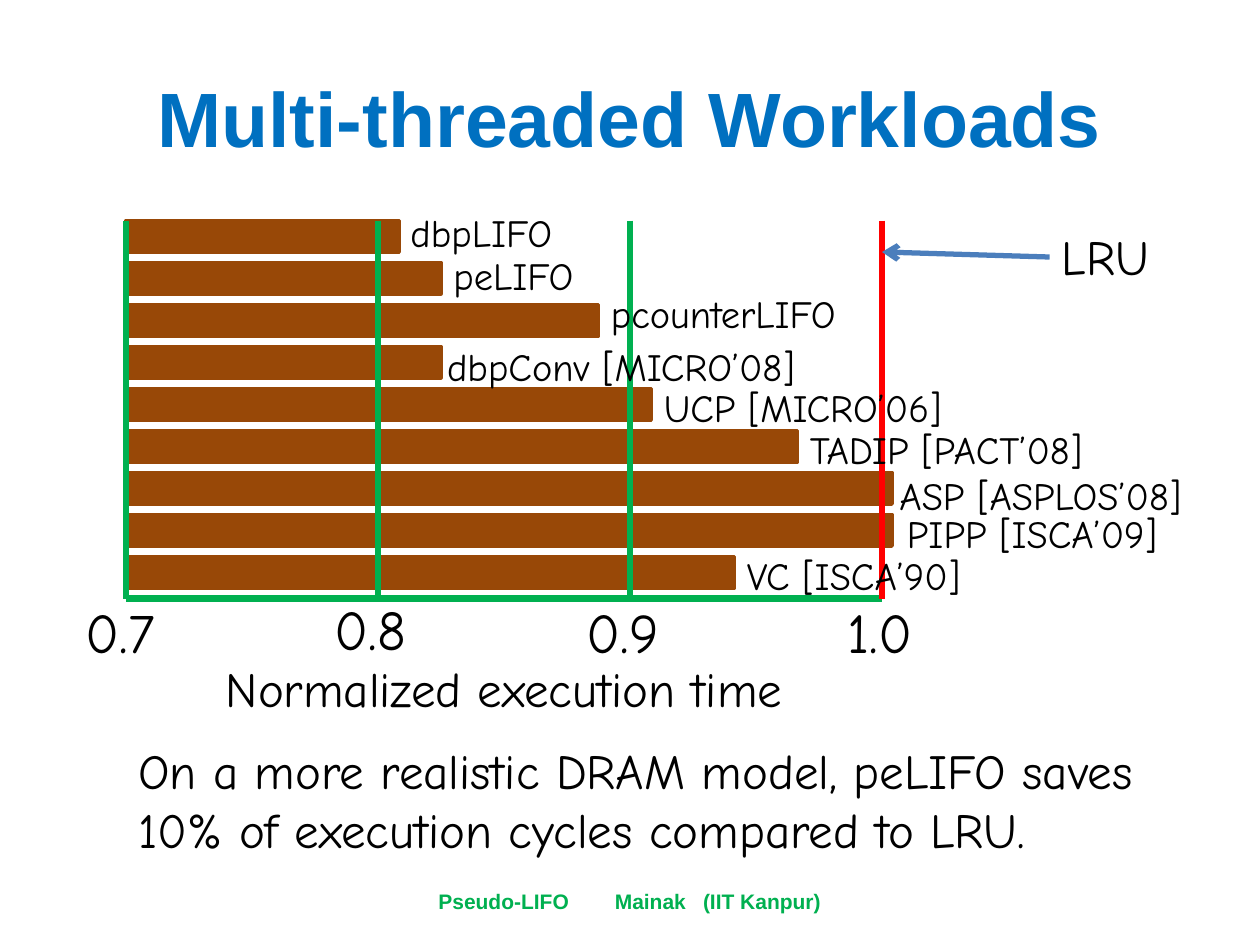
from pptx import Presentation
from pptx import util as u
from pptx.dml.color import RGBColor
from pptx.enum import shapes, text
from pptx.oxml.ns import qn
from lxml import etree

Inches, Pt = u.Inches, u.Pt
COLORS = {"title": "0070C0", "green": "00B050", "bar": "984807",
          "red": "FF0000", "arrow": "4B7EBC", "ink": "000000"}
BODY_FONT = "Comic Neue"

# Scheme, bar width, label left, label top, label width
SCHEMES = [
    ("dbpLIFO", 2.17, 3.16, 1.61, 1.5),
    ("peLIFO", 2.5, 3.5, 1.95, 1.31),
    ("pcounterLIFO", 3.75, 4.75, 2.25, 2.25),
    ("dbpConv [MICRO’08]", 2.5, 3.45, 2.67, 3.21),
    ("UCP [MICRO’06]", 4.17, 5.17, 3, 2.6),
    ("TADIP [PACT’08]", 5.33, 6.33, 3.33, 2.73),
    ("ASP [ASPLOS’08]", 6.08, 7.04, 3.7, 2.79),
    ("PIPP [ISCA’09]", 6.08, 7.1, 4, 2.4),
    ("VC [ISCA’90]", 4.83, 5.83, 4.33, 2.14),
]
# Axis value, label left, label top, label width
TICKS = [("0.7", 0.58, 4.69, 0.86), ("0.8", 2.56, 4.67, 0.86),
         ("0.9", 4.56, 4.69, 0.86), ("1.0", 6.63, 4.69, 0.79)]


def color(name):
    return RGBColor.from_string(COLORS[name])


def place(shape, box):
    shape.left, shape.top, shape.width, shape.height = map(Inches, box)


def format_text(frame, size, name="ink", font=BODY_FONT, bold=False, align=None):
    for para in frame.paragraphs:
        para.alignment = align
        for span in para.runs:
            span.font.size = Pt(size)
            span.font.name = font
            span.font.bold = bold
            span.font.color.rgb = color(name)


def add_label(page, words, box, size, wrap=False, align=None):
    label = page.shapes.add_textbox(*map(Inches, box))
    frame = label.text_frame
    frame.text = words
    frame.word_wrap = wrap
    frame.auto_size = text.MSO_AUTO_SIZE.SHAPE_TO_FIT_TEXT
    format_text(frame, size, align=align)


def add_line(page, start, end, name, width):
    line = page.shapes.add_connector(shapes.MSO_CONNECTOR.STRAIGHT,
                                     *map(Inches, (*start, *end)))
    line.line.color.rgb = color(name)
    line.line.width = Pt(width)
    etree.SubElement(line._element.spPr, qn("a:effectLst"))
    return line


def add_title(page, box):
    title = page.shapes.title
    place(title, box)
    title.text_frame.text = "Multi-threaded Workloads"
    title.text_frame.vertical_anchor = text.MSO_ANCHOR.MIDDLE
    format_text(title.text_frame, 44, "title", "Arial", True, text.PP_ALIGN.CENTER)


def add_plot(page, box):
    left, top, width, height = box
    bottom = top + height
    # Axis with its labels
    add_line(page, (left, bottom), (left + width, bottom), "green", 4)
    for words, x, y, label_width in TICKS:
        add_label(page, words, (x, y, label_width, 0.64), 32)
    add_label(page, "Normalized execution time", (left, bottom + 0.43, width, 0.57),
              28, True, text.PP_ALIGN.CENTER)
    # Bars
    pitch = height / len(SCHEMES)
    for row, (_, bar_width, *_) in enumerate(SCHEMES):
        bar_box = (left, top + row * pitch, bar_width, 0.25)
        bar = page.shapes.add_shape(shapes.MSO_SHAPE.RECTANGLE, *map(Inches, bar_box))
        bar.shadow.inherit = False
        bar.fill.solid()
        bar.fill.fore_color.rgb = color("bar")
        bar.line.color.rgb = color("bar")
        bar.line.width = Pt(2)
    # Grid lines, the last one being the LRU baseline
    last = len(TICKS) - 1
    for column in range(len(TICKS)):
        x = left + column * width / last
        add_line(page, (x, top), (x, bottom), "red" if column == last else "green", 4)
    # Scheme names
    for words, _, x, y, label_width in SCHEMES:
        add_label(page, words, (x, y, label_width, 0.47), 22)


def add_baseline_note(page, box):
    left, top, _, _ = box
    add_label(page, "LRU", box, 28)
    arrow = add_line(page, (left, top + 0.29), (7, 2), "arrow", 3)
    etree.SubElement(arrow.line._get_or_add_ln(), qn("a:tailEnd"), type="arrow")


def add_footer(page, box):
    footer = page.shapes.add_textbox(*map(Inches, box))
    frame = footer.text_frame
    frame.text = "Pseudo-LIFO\tMainak\t(IIT Kanpur)"
    frame.word_wrap = True
    frame.vertical_anchor = text.MSO_ANCHOR.MIDDLE
    frame.margin_left = Inches(0.65)
    format_text(frame, 12, "green", "Arial", True, text.PP_ALIGN.LEFT)
    tabs = etree.SubElement(frame.paragraphs[0]._p.get_or_add_pPr(), qn("a:tabLst"))
    for stop in (1.4, 2.1):
        etree.SubElement(tabs, qn("a:tab"), pos=str(Inches(stop)), algn="l")


def main():
    deck = Presentation()
    deck.slide_width, deck.slide_height = Inches(10), Inches(7.5)
    page = deck.slides.add_slide(deck.slide_layouts[5])
    add_title(page, (0, 0.3, 10, 1.25))
    add_footer(page, (2.83, 6.95, 4.33, 0.4))
    add_plot(page, (1, 1.75, 6, 3))
    add_label(page, "On a more realistic DRAM model, peLIFO saves\n"
              "10% of execution cycles compared to LRU.", (1, 5.83, 9.03, 1.04), 28)
    add_baseline_note(page, (8.33, 1.75, 0.95, 0.57))
    deck.save("out.pptx")


if __name__ == "__main__":
    main()
